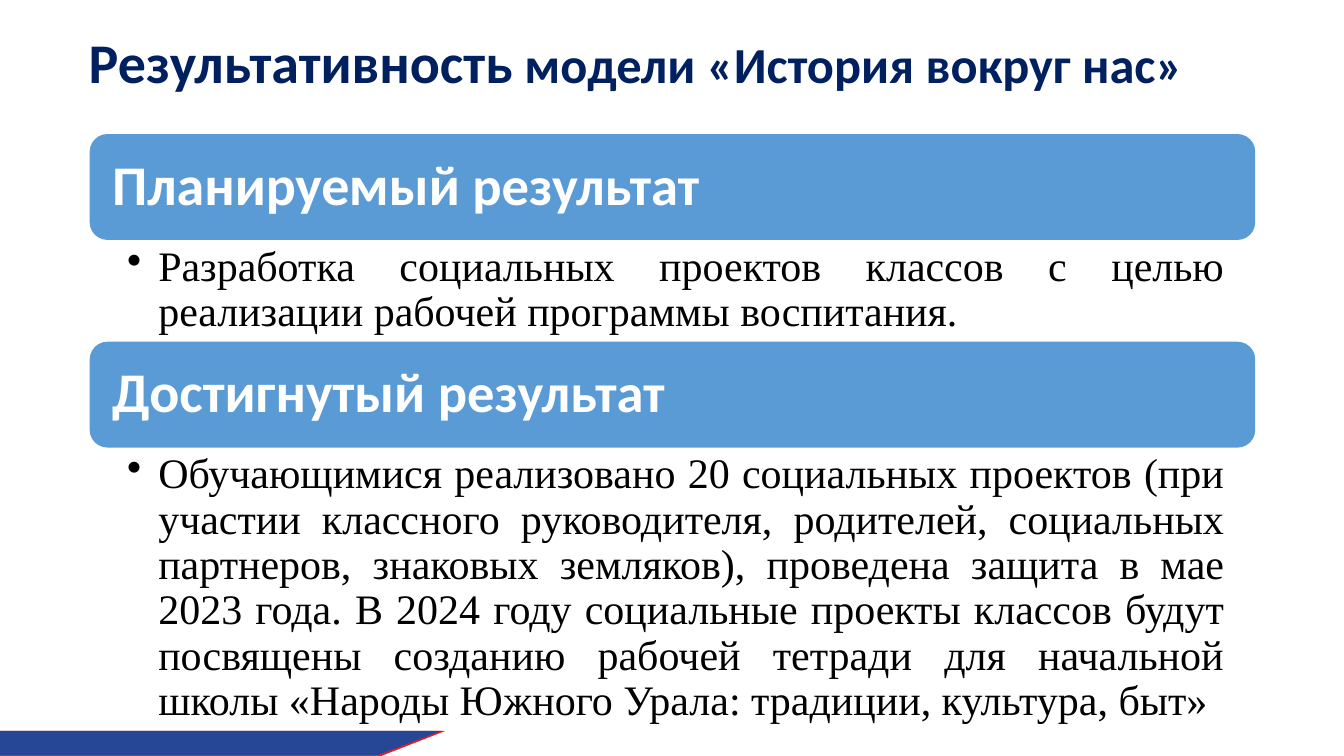
from dataclasses import dataclass

from lxml.etree import SubElement
from pptx import Presentation
from pptx.dml.color import RGBColor
from pptx.enum.text import MSO_ANCHOR, MSO_AUTO_SIZE, PP_ALIGN
from pptx.enum.shapes import MSO_SHAPE
from pptx.oxml.ns import qn
from pptx.util import Inches, Pt

COLORS = {
    "title": "002060",
    "heading": "5B9BD5",
    "heading_text": "FFFFFF",
    "body": "000000",
    "stripe_red": "E31E24",
    "stripe_blue": "264796",
}
HEADING_FONT = "Calibri"
BODY_FONT = "Times New Roman"

LEFT, WIDTH = 0.89, 11.56
HEADING_HEIGHT = 1.05
FIRST_TOP = 1.33
STRIPE_TOP = 7.25


@dataclass
class TextPart:
    text: str
    size: float


@dataclass
class ResultSection:
    heading: list[TextPart]
    body: str
    body_height: float


@dataclass
class Stripe:
    top_right: float
    bottom_right: float
    bottom: float
    color: str


TITLE = [TextPart("Результативность", 40), TextPart(" модели «История вокруг нас»", 36)]

SECTIONS = [
    ResultSection(
        [TextPart("Планируемый", 40), TextPart(" результат", 39)],
        "Разработка социальных проектов классов с целью реализации рабочей "
        "программы воспитания.",
        1.01,
    ),
    ResultSection(
        [TextPart("Достигнутый", 40), TextPart(" результат", 39)],
        "Обучающимися реализовано 20 социальных проектов (при участии классного "
        "руководителя, родителей, социальных партнеров, знаковых земляков), "
        "проведена защита в мае 2023 года. В 2024 году социальные проекты классов "
        "будут посвящены созданию рабочей тетради для начальной школы «Народы "
        "Южного Урала: традиции, культура, быт»",
        2.74,
    ),
]

STRIPES = [
    Stripe(4.42, 3.78, 7.5, "stripe_red"),
    Stripe(4.38, 3.75, 7.49, "stripe_blue"),
]


def color_of(name: str) -> RGBColor:
    return RGBColor.from_string(COLORS[name])


def fill_plain(shape, color: str) -> None:
    """Give a shape a solid fill with no outline and no shadow."""
    shape.shadow.inherit = False
    shape.fill.solid()
    shape.fill.fore_color.rgb = color_of(color)
    shape.line.fill.background()


def format_font(font, name: str, size: float, color: str, bold: bool) -> None:
    font.name = name
    font.size = Pt(size)
    font.bold = bold
    font.color.rgb = color_of(color)


def write_heading(text_frame, parts: list[TextPart], color: str) -> None:
    """Write one left-aligned bold line whose parts differ in size."""
    text_frame.word_wrap = True
    text_frame.auto_size = MSO_AUTO_SIZE.NONE
    text_frame.vertical_anchor = MSO_ANCHOR.MIDDLE
    paragraph = text_frame.paragraphs[0]
    paragraph.alignment = PP_ALIGN.LEFT
    paragraph.line_spacing = 0.9
    for part in parts:
        run = paragraph.add_run()
        run.text = part.text
        format_font(run.font, HEADING_FONT, part.size, color, True)


def add_stripe(slide, stripe: Stripe) -> None:
    builder = slide.shapes.build_freeform(0, Inches(stripe.bottom))
    corners = [
        (0, STRIPE_TOP),
        (stripe.top_right, STRIPE_TOP),
        (stripe.bottom_right, stripe.bottom),
    ]
    builder.add_line_segments([(Inches(x), Inches(y)) for x, y in corners], close=True)
    fill_plain(builder.convert_to_shape(), stripe.color)


def add_title(slide) -> None:
    title = slide.shapes.title
    title.left, title.top = Inches(0.78), Inches(0.14)
    title.width, title.height = Inches(12.4), Inches(1.02)
    write_heading(title.text_frame, TITLE, "title")


def add_section_heading(slide, parts: list[TextPart], top: float) -> None:
    bar = slide.shapes.add_shape(
        MSO_SHAPE.ROUNDED_RECTANGLE,
        Inches(LEFT), Inches(top), Inches(WIDTH), Inches(HEADING_HEIGHT),
    )
    fill_plain(bar, "heading")
    bar.text_frame.margin_left = bar.text_frame.margin_right = Inches(0.17)
    write_heading(bar.text_frame, parts, "heading_text")


def add_section_body(slide, text: str, top: float, height: float) -> None:
    box = slide.shapes.add_textbox(
        Inches(LEFT), Inches(top), Inches(WIDTH), Inches(height)
    )
    text_frame = box.text_frame
    text_frame.word_wrap = True
    text_frame.margin_left, text_frame.margin_right = Inches(0.37), Inches(0.3)
    paragraph = text_frame.paragraphs[0]
    paragraph.text = text
    paragraph.alignment = PP_ALIGN.JUSTIFY
    paragraph.line_spacing = 0.9
    properties = paragraph._p.get_or_add_pPr()
    properties.set("marL", str(Inches(0.31)))
    properties.set("indent", str(-Inches(0.31)))
    SubElement(properties, qn("a:buChar"), char="•")
    format_font(paragraph.runs[0].font, BODY_FONT, 30, "body", False)


def main() -> None:
    presentation = Presentation()
    presentation.slide_width = Inches(13.33)
    presentation.slide_height = Inches(7.5)
    slide = presentation.slides.add_slide(presentation.slide_layouts.get_by_name("Title Only"))

    for stripe in STRIPES:
        add_stripe(slide, stripe)
    add_title(slide)

    top = FIRST_TOP
    for section in SECTIONS:
        add_section_heading(slide, section.heading, top)
        top += HEADING_HEIGHT
        add_section_body(slide, section.body, top, section.body_height)
        top += section.body_height

    presentation.save("out.pptx")


if __name__ == "__main__":
    main()
